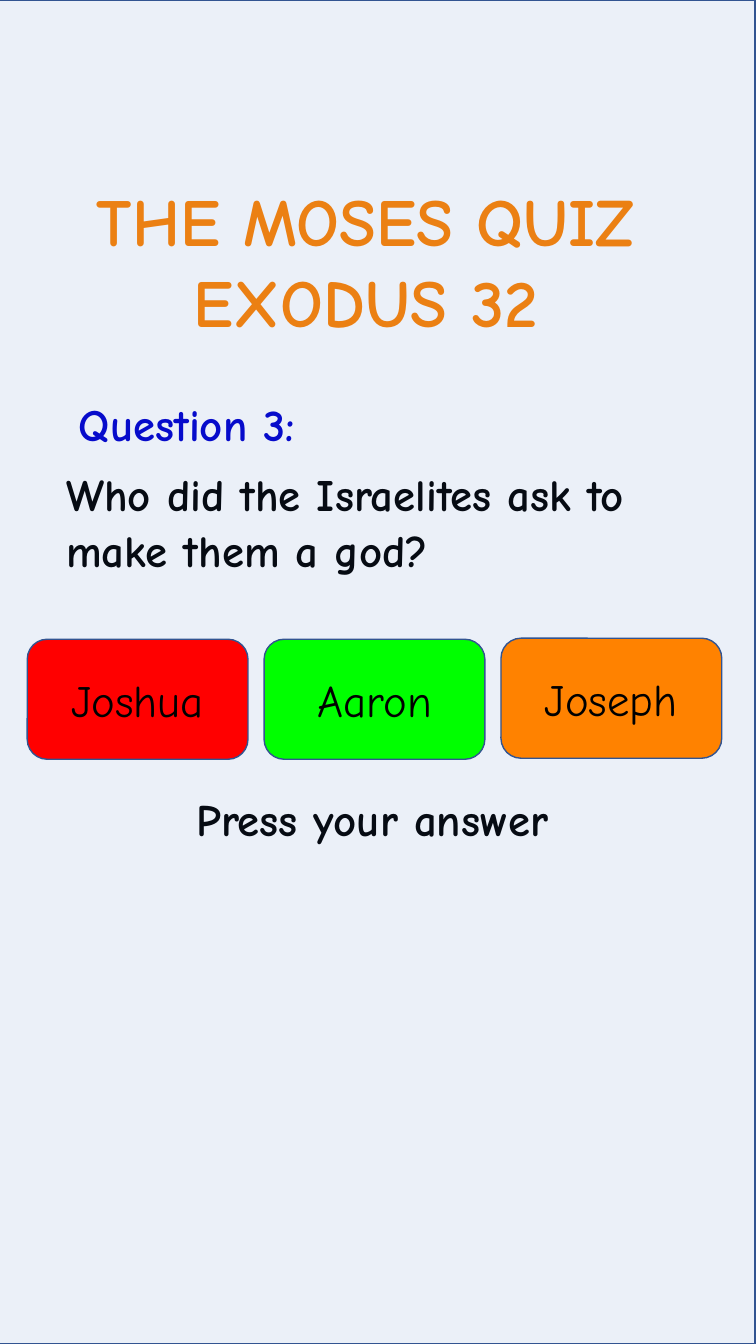
from lxml.etree import SubElement
from pptx import Presentation
from pptx.dml.color import RGBColor
from pptx.enum.shapes import MSO_SHAPE
from pptx.enum.text import MSO_ANCHOR, MSO_AUTO_SIZE, PP_ALIGN
from pptx.oxml.ns import qn
from pptx.util import Inches, Pt

# Content
COLORS = {"title": "FF8200", "question": "0000CC", "text": "000000",
          "veil": "4472C4", "outline": "325491",
          "red": "FF0000", "green": "00FF00", "orange": "FF8200"}
FONT = "Comic Neue"
TITLE = ["THE MOSES QUIZ ", "EXODUS 32 "]
NUMBER = ["Question 3:"]
QUESTION = ["Who did the Israelites ask to make them a god?"]
PROMPT = ["Press your answer"]
ANSWERS = [("Joshua", "red", 6.34), ("Aaron", "green", 6.34), ("Joseph", "orange", 6.33)]

# Layout in inches
WIDTH, HEIGHT = 7.5, 13.33
BUTTON_LEFT, BUTTON_PITCH = 0.27, 2.35
BUTTON_WIDTH, BUTTON_HEIGHT = 2.19, 1.19
VEIL_OPACITY = 10


def color(name):
    return RGBColor.from_string(COLORS[name])


def style(paragraph, size, color_name, bold=False):
    paragraph.font.name = FONT
    paragraph.font.size = Pt(size)
    paragraph.font.bold = bold
    paragraph.font.color.rgb = color(color_name)


def add_text(slide, box, lines, size, color_name, centred=False, spacing=None):
    frame = slide.shapes.add_textbox(*map(Inches, box)).text_frame
    frame.word_wrap = not centred
    frame.auto_size = MSO_AUTO_SIZE.SHAPE_TO_FIT_TEXT if centred else MSO_AUTO_SIZE.NONE
    for index, line in enumerate(lines):
        paragraph = frame.add_paragraph() if index else frame.paragraphs[0]
        paragraph.text = line
        style(paragraph, size, color_name, bold=True)
        if centred:
            paragraph.alignment = PP_ALIGN.CENTER
        if spacing:
            paragraph.line_spacing = spacing
            paragraph.space_before = Pt(7.5)


def add_panel(slide, preset, box, fill):
    shape = slide.shapes.add_shape(preset, *map(Inches, box))
    shape.shadow.inherit = False
    shape.fill.solid()
    shape.fill.fore_color.rgb = color(fill)
    shape.line.color.rgb = color("outline")
    shape.line.width = Pt(1)
    return shape


def main():
    presentation = Presentation()
    presentation.slide_width = Inches(WIDTH)
    presentation.slide_height = Inches(HEIGHT)
    slide = presentation.slides.add_slide(presentation.slide_layouts[6])

    # Title, question and prompt
    add_text(slide, (0.3, 1.73, 6.89, 1.72), TITLE, 48, "title", centred=True)
    add_text(slide, (0.47, 3.89, 2.77, 0.64), NUMBER, 32, "question", centred=True)
    add_text(slide, (0.56, 4.56, 6.36, 1.46), QUESTION, 32, "text", spacing=Pt(40))
    add_text(slide, (1.85, 7.86, 4.22, 0.72), PROMPT, 32, "text", spacing=0.9)

    # Translucent veil over the whole slide
    veil = add_panel(slide, MSO_SHAPE.RECTANGLE, (-0.01, 0, WIDTH, HEIGHT), "veil")
    veil_color = veil._element.spPr.find(qn("a:solidFill")).find(qn("a:srgbClr"))
    SubElement(veil_color, qn("a:alpha")).set("val", str(VEIL_OPACITY * 1000))

    # Answer buttons
    for column, (answer, fill, top) in enumerate(ANSWERS):
        left = BUTTON_LEFT + column * BUTTON_PITCH
        button = add_panel(slide, MSO_SHAPE.ROUNDED_RECTANGLE,
                           (left, top, BUTTON_WIDTH, BUTTON_HEIGHT), fill)
        button.text_frame.vertical_anchor = MSO_ANCHOR.MIDDLE
        paragraph = button.text_frame.paragraphs[0]
        paragraph.text = answer
        paragraph.alignment = PP_ALIGN.CENTER
        style(paragraph, 32, "text")

    presentation.save("out.pptx")


if __name__ == "__main__":
    main()
